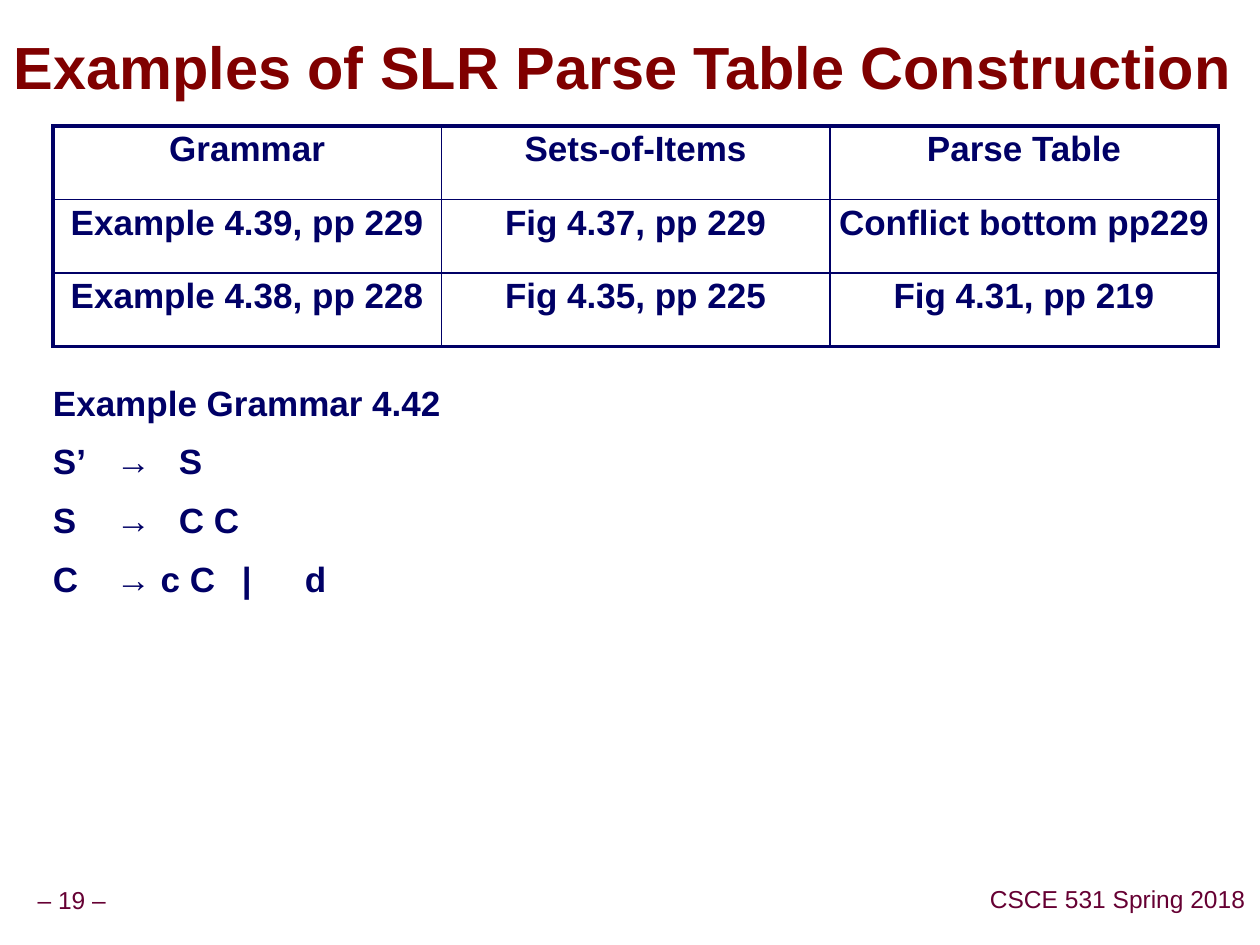
from lxml.etree import SubElement
from pptx import Presentation
from pptx.dml.color import RGBColor
from pptx.enum.text import MSO_ANCHOR as Anchor, MSO_AUTO_SIZE as AutoSize, PP_ALIGN as Align
from pptx.oxml.ns import qn
from pptx.util import Inches, Pt

NAVY, MAROON, PLUM, GREY = "000066", "800000", "660033", "999999"


def color(value):
    return RGBColor.from_string(value)


def add_hex(parent, value):
    fill = SubElement(parent, qn("a:solidFill"))
    SubElement(fill, qn("a:srgbClr"), val=value)


class SlideBuilder:
    font = "Arial"
    body_size = 20
    body_spacing = 0.95
    thick, thin = 2.25, 1

    def __init__(self, deck):
        self.page = deck.slides.add_slide(deck.slide_layouts[1])

    def place(self, shape, left, top, width, height):
        shape.left, shape.top = Inches(left), Inches(top)
        shape.width, shape.height = Inches(width), Inches(height)

    def set_frame(self, frame, anchor, side, end):
        frame.vertical_anchor = anchor
        frame.margin_left = frame.margin_right = Inches(side)
        frame.margin_top = frame.margin_bottom = Inches(end)

    def style(self, para, size, value, bold, align, spacing):
        para.alignment = align
        para.line_spacing = spacing
        para.space_before = Pt(0)
        for span in para.runs:
            span.font.name, span.font.size, span.font.bold = self.font, Pt(size), bold
            span.font.color.rgb = color(value)

    def add_title(self, text, *box):
        title = self.page.shapes.title
        self.place(title, *box)
        frame = title.text_frame
        frame.text = text
        frame.word_wrap, frame.auto_size = True, AutoSize.NONE
        self.set_frame(frame, Anchor.MIDDLE, 0, 0)
        para = frame.paragraphs[0]
        self.style(para, 34, MAROON, True, Align.LEFT, 0.87)
        # Text shadow goes right after the colour fill
        props = para.runs[0].font._element if hasattr(para.runs[0].font, "_element") else para.runs[0]._r.rPr
        effects = SubElement(props, qn("a:effectLst"))
        shadow = SubElement(effects, qn("a:outerShdw"), dist="45720", dir="2700000", algn="ctr")
        SubElement(shadow, qn("a:srgbClr"), val=GREY)
        props.find(qn("a:solidFill")).addnext(effects)

    def add_body(self, lines, stops, *box):
        body = self.page.placeholders[1]
        self.place(body, *box)
        frame = body.text_frame
        frame.text = "\n".join(lines)
        frame.word_wrap, frame.auto_size = True, AutoSize.NONE
        self.set_frame(frame, Anchor.TOP, 0.1, 0.05)
        for index, para in enumerate(frame.paragraphs):
            props = para._p.get_or_add_pPr()
            props.set("marL", "0")
            props.set("indent", "0")
            SubElement(props, qn("a:buNone"))
            tabs = SubElement(props, qn("a:tabLst"))
            for stop in stops:
                SubElement(tabs, qn("a:tab"), pos=str(Inches(stop)), algn="l")
            self.style(para, self.body_size, NAVY, True, Align.LEFT, self.body_spacing)
            if index:
                para.space_before = Pt(10.7)

    def add_table(self, rows, left, top, width, height):
        count, columns = len(rows), len(rows[0])
        table = self.page.shapes.add_table(
            count, columns, Inches(left), Inches(top), Inches(width), Inches(height)).table
        table.first_row = table.horz_banding = False
        for r, row in enumerate(rows):
            for c, text in enumerate(row):
                cell = table.cell(r, c)
                cell.text = text
                self.set_frame(cell, Anchor.TOP, 0.05, 0.05)
                self.style(cell.text_frame.paragraphs[0], self.body_size, NAVY, True,
                           Align.CENTER, self.body_spacing)
                self.add_borders(cell, L=c == 0, R=c == columns - 1, T=r == 0, B=r == count - 1)
                cell.fill.background()

    def add_borders(self, cell, **outer_sides):
        props = cell._tc.get_or_add_tcPr()
        for side, outer in outer_sides.items():
            width = Pt(self.thick if outer else self.thin)
            add_hex(SubElement(props, qn("a:ln" + side), w=str(width)), NAVY)

    def add_footer(self, text, *box):
        footer = self.page.shapes.add_textbox(0, 0, 0, 0)
        self.place(footer, *box)
        frame = footer.text_frame
        frame.text = text
        frame.word_wrap, frame.auto_size = False, AutoSize.SHAPE_TO_FIT_TEXT
        self.set_frame(frame, Anchor.MIDDLE, 0.05, 0.05)
        self.style(frame.paragraphs[0], 14, PLUM, False, Align.CENTER, 0.9)


def main():
    deck = Presentation()
    deck.slide_width, deck.slide_height = Inches(10), Inches(7.5)
    slide = SlideBuilder(deck)

    # Footer
    slide.add_footer("– 19 –", 0.24, 7, 0.66, 0.31)
    slide.add_footer("CSCE 531 Spring 2018", 7.8, 6.99, 2.14, 0.31)

    # Title and grammar, with tab stops for arrow, right side, bar and alternative
    slide.add_title("Examples of SLR Parse Table Construction", 0.11, 0.08, 9.98, 0.96)
    grammar = ["Example Grammar 4.42", "S’\t→\tS", "S\t→\tC C", "C\t→ c C\t|\td"]
    slide.add_body(grammar, [0.38, 0.79, 1.37, 1.68], 0.32, 3, 9.35, 4.05)

    # Table of examples
    slide.add_table([
        ["Grammar", "Sets-of-Items", "Parse Table"],
        ["Example 4.39, pp 229", "Fig 4.37, pp 229", "Conflict bottom pp229"],
        ["Example 4.38, pp 228", "Fig 4.35, pp 225", "Fig 4.31, pp 219"],
    ], 0.42, 1, 9.25, 1.75)

    deck.save("out.pptx")


if __name__ == "__main__":
    main()
